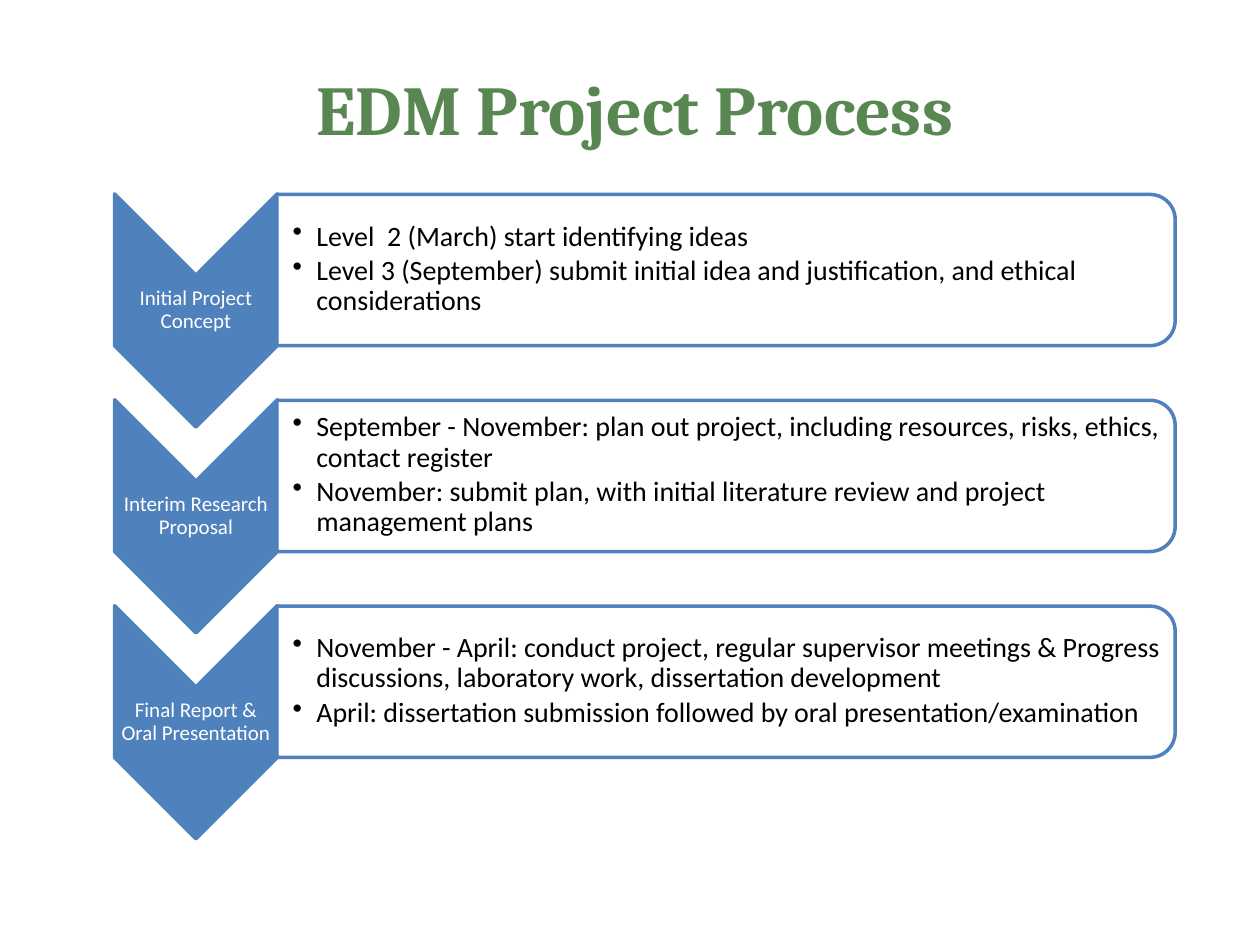
"""Build the EDM Project Process slide: three chevron steps with their details."""
import pptx
import pptx.dml.color
import pptx.enum.shapes
import pptx.enum.text
import pptx.oxml
import pptx.oxml.ns
import pptx.util
from dataclasses import dataclass

Cm, Pt = pptx.util.Cm, pptx.util.Pt
RGB = pptx.dml.color.RGBColor.from_string
SHAPE = pptx.enum.shapes.MSO_SHAPE
ALIGN = pptx.enum.text.PP_ALIGN
ANCHOR = pptx.enum.text.MSO_ANCHOR


@dataclass(frozen=True)
class Theme:
    blue: str = "4F81BD"
    green: str = "598752"
    white: str = "FFFFFF"
    black: str = "000000"
    head_font: str = "Cambria"
    body_font: str = "Calibri"
    title: int = 40
    label: int = 12
    detail: int = 16


theme = Theme()


def add_block(s, kind, left, top, width, height, color):
    sp = s.shapes.add_shape(kind, Cm(left), Cm(top), Cm(width), Cm(height))
    sp.rotation = 90
    sp.shadow.inherit = False
    sp.fill.solid()
    sp.fill.fore_color.rgb = RGB(color)
    sp.line.color.rgb = RGB(theme.blue)
    sp.line.width = Pt(2)
    return sp


def add_text(s, box, lines, size, color, font=theme.body_font, anchor=ANCHOR.MIDDLE,
             spacing=0.9, inset=0.03, bold=False, bullets=False):
    tf = s.shapes.add_textbox(*[Cm(v) for v in box]).text_frame
    tf.word_wrap = True
    tf.vertical_anchor = anchor
    tf.margin_left = Cm(0.31 if bullets else inset)
    tf.margin_top = tf.margin_right = tf.margin_bottom = Cm(inset)
    for i, line in enumerate(lines):
        p = tf.paragraphs[0] if i == 0 else tf.add_paragraph()
        p.alignment = ALIGN.LEFT if bullets else ALIGN.CENTER
        p.line_spacing = spacing
        if i:
            p.space_before = Pt(2.4)
        if bullets:
            pPr = p._p.get_or_add_pPr()
            pPr.set("marL", str(Cm(0.48)))
            pPr.set("indent", str(-Cm(0.48)))
            bu = pptx.oxml.parse_xml(
                f'<a:buChar {pptx.oxml.ns.nsdecls("a")} char="•"/>')
            pPr.append(bu)
        r = p.add_run()
        r.text = line
        r.font.name = font
        r.font.size = Pt(size)
        r.font.bold = bold
        r.font.color.rgb = RGB(color)


steps = [
    ("Initial Project Concept",
     ["Level  2 (March) start identifying ideas",
      "Level 3 (September) submit initial idea and justification, and ethical considerations"]),
    ("Interim Research Proposal",
     ["September - November: plan out project, including resources, risks, ethics, contact register",
      "November: submit plan, with initial literature review and project management plans"]),
    ("Final Report & Oral Presentation",
     ["November - April: conduct project, regular supervisor meetings & Progress discussions, "
      "laboratory work, dissertation development",
      "April: dissertation submission followed by oral presentation/examination"]),
]
pitch = 4.15

prs = pptx.Presentation()
prs.slide_width, prs.slide_height = Cm(25.4), Cm(19.05)
s = prs.slides.add_slide(prs.slide_layouts[6])

add_text(s, (1.5, 1.32, 22.6, 2.2), ["EDM Project Process"], theme.title, theme.green,
         font=theme.head_font, anchor=ANCHOR.TOP, spacing=Pt(48), inset=0, bold=True)

for i, (label, details) in enumerate(steps):
    dy = i * pitch
    add_block(s, SHAPE.CHEVRON, 1.6, 4.62 + dy, 4.7, 3.28, theme.blue)
    add_text(s, (2.31, 5.56 + dy, 3.28, 1.4), [label], theme.label, theme.white)
    bar = add_block(s, SHAPE.ROUND_2_SAME_RECTANGLE, 13.11, -3.61 + dy, 3.05, 18.11, theme.white)
    clr = bar.fill._xPr.find(".//" + pptx.oxml.ns.qn("a:srgbClr"))
    clr.append(pptx.oxml.parse_xml(f'<a:alpha {pptx.oxml.ns.nsdecls("a")} val="90000"/>'))
    add_text(s, (5.59, 4.06 + dy, 17.96, 2.74), details, theme.detail, theme.black, bullets=True)

prs.save("out.pptx")
